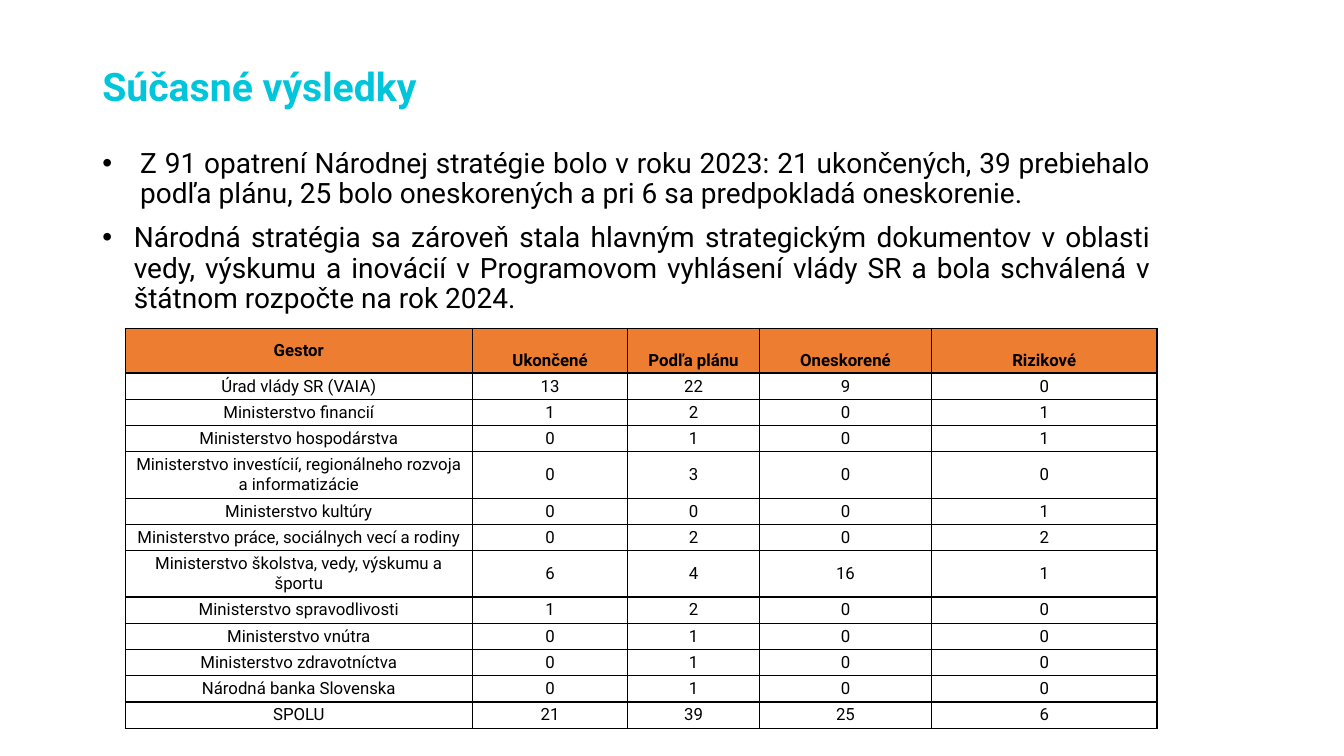
"""Build the slide of current results with a table of measures by manager."""
from pptx import Presentation
from pptx.dml.color import RGBColor
from pptx.enum.text import MSO_ANCHOR, PP_ALIGN
from pptx.oxml import parse_xml
from pptx.oxml.ns import nsdecls
from pptx.util import Pt

MIDDLE, BOTTOM = MSO_ANCHOR.MIDDLE, MSO_ANCHOR.BOTTOM
CENTER, JUSTIFY = PP_ALIGN.CENTER, PP_ALIGN.JUSTIFY
HUES = {"title": "00C5DB", "text": "000000", "head": "ED7D31", "row": "FFFFFF"}
INSETS = {"margin_left": Pt(4.32), "margin_right": Pt(4.32),
          "margin_top": Pt(2.16), "margin_bottom": Pt(2.16)}
POINTS = [
    (27, "Z 91 opatrení Národnej stratégie bolo v roku 2023: 21 ukončených, "
         "39 prebiehalo podľa plánu, 25 bolo oneskorených a pri 6 sa "
         "predpokladá oneskorenie."),
    (22.5, "Národná stratégia sa zároveň stala hlavným strategickým dokumentov "
           "v oblasti vedy, výskumu a inovácií v Programovom vyhlásení vlády SR "
           "a bola schválená v štátnom rozpočte na rok 2024."),
]
WIDTHS = [248, 111, 94, 123, 161]
LOW, HIGH = 18, 32
ROWS = [
    (HIGH, "Gestor", "Ukončené", "Podľa plánu", "Oneskorené", "Rizikové"),
    (LOW, "Úrad vlády SR (VAIA)", 13, 22, 9, 0),
    (LOW, "Ministerstvo financií", 1, 2, 0, 1),
    (LOW, "Ministerstvo hospodárstva", 0, 1, 0, 1),
    (HIGH, "Ministerstvo investícií, regionálneho rozvoja a informatizácie",
     0, 3, 0, 0),
    (LOW, "Ministerstvo kultúry", 0, 0, 0, 1),
    (LOW, "Ministerstvo práce, sociálnych vecí a rodiny", 0, 2, 0, 2),
    (HIGH, "Ministerstvo školstva, vedy, výskumu a športu", 6, 4, 16, 1),
    (LOW, "Ministerstvo spravodlivosti", 1, 2, 0, 0),
    (LOW, "Ministerstvo vnútra", 0, 1, 0, 0),
    (LOW, "Ministerstvo zdravotníctva", 0, 1, 0, 0),
    (LOW, "Národná banka Slovenska", 0, 1, 0, 0),
    (LOW, "SPOLU", 21, 39, 25, 6),
]


def style(item, values):
    """Set each named attribute on the item."""
    for name, value in values.items():
        setattr(item, name, value)


def write(para, text, size, align, hue="text", bold=False):
    """Fill a paragraph with text in the slide font."""
    para.text = str(text)
    para.alignment = align
    style(para.font, {"name": "Roboto", "size": Pt(size), "bold": bold})
    para.font.color.rgb = RGBColor.from_string(HUES[hue])


def add_box(slide, left, top, width, height):
    """Add a wrapping text box and return its frame."""
    box = slide.shapes.add_textbox(Pt(left), Pt(top), Pt(width), Pt(height))
    box.text_frame.word_wrap = True
    return box.text_frame


def add_bullet(para, indent):
    """Give a paragraph a round bullet with a hanging indent."""
    props = para._p.get_or_add_pPr()
    props.set("marL", str(Pt(indent)))
    props.set("indent", str(-Pt(indent)))
    for mark in ('buFont {} typeface="Arial"', 'buChar {} char="•"'):
        props.append(parse_xml(f"<a:{mark.format(nsdecls('a'))}/>"))


def add_list(slide, points):
    """Add the justified bullet list."""
    frame = add_box(slide, 66, 103, 763, 392)
    for order, (indent, text) in enumerate(points):
        para = frame.add_paragraph() if order else frame.paragraphs[0]
        add_bullet(para, indent)
        write(para, text, 20, JUSTIFY)
        style(para, {"line_spacing": 0.9, "space_before": Pt(10 if order else 0)})


def add_edges(cell):
    """Draw a thin line on all sides of a cell."""
    props = cell._tc.get_or_add_tcPr()
    for side in "LRTB":
        props.append(parse_xml(
            f'<a:ln{side} {nsdecls("a")} w="{Pt(1)}"><a:solidFill>'
            f'<a:srgbClr val="{HUES["text"]}"/></a:solidFill></a:ln{side}>'))


def fill_cell(cell, text, head, first):
    """Write, frame and colour one table cell."""
    style(cell, INSETS)
    cell.vertical_anchor = BOTTOM if head and not first else MIDDLE
    write(cell.text_frame.paragraphs[0], text, 12, CENTER, bold=head)
    add_edges(cell)
    cell.fill.solid()
    cell.fill.fore_color.rgb = RGBColor.from_string(HUES["head" if head else "row"])


def add_grid(slide, widths, rows):
    """Add the table of measures."""
    high = sum(row[0] for row in rows)
    table = slide.shapes.add_table(len(rows), len(widths), Pt(89.5), Pt(234.5),
                                   Pt(sum(widths)), Pt(high)).table
    style(table, {"first_row": False, "horz_banding": False})
    for col, width in zip(table.columns, widths):
        col.width = Pt(width)
    for r, (height, *texts) in enumerate(rows):
        table.rows[r].height = Pt(height)
        for c, text in enumerate(texts):
            fill_cell(table.cell(r, c), text, r == 0, c == 0)


def main():
    """Build and save the slide."""
    deck = Presentation()
    style(deck, {"slide_width": Pt(960), "slide_height": Pt(540)})
    slide = deck.slides.add_slide(deck.slide_layouts[6])
    title = add_box(slide, 66, 44.5, 696, 61).paragraphs[0]
    write(title, "Súčasné výsledky", 28, JUSTIFY, "title", True)
    title.line_spacing = 0.9
    add_list(slide, POINTS)
    add_grid(slide, WIDTHS, ROWS)
    deck.save("out.pptx")


if __name__ == "__main__":
    main()
